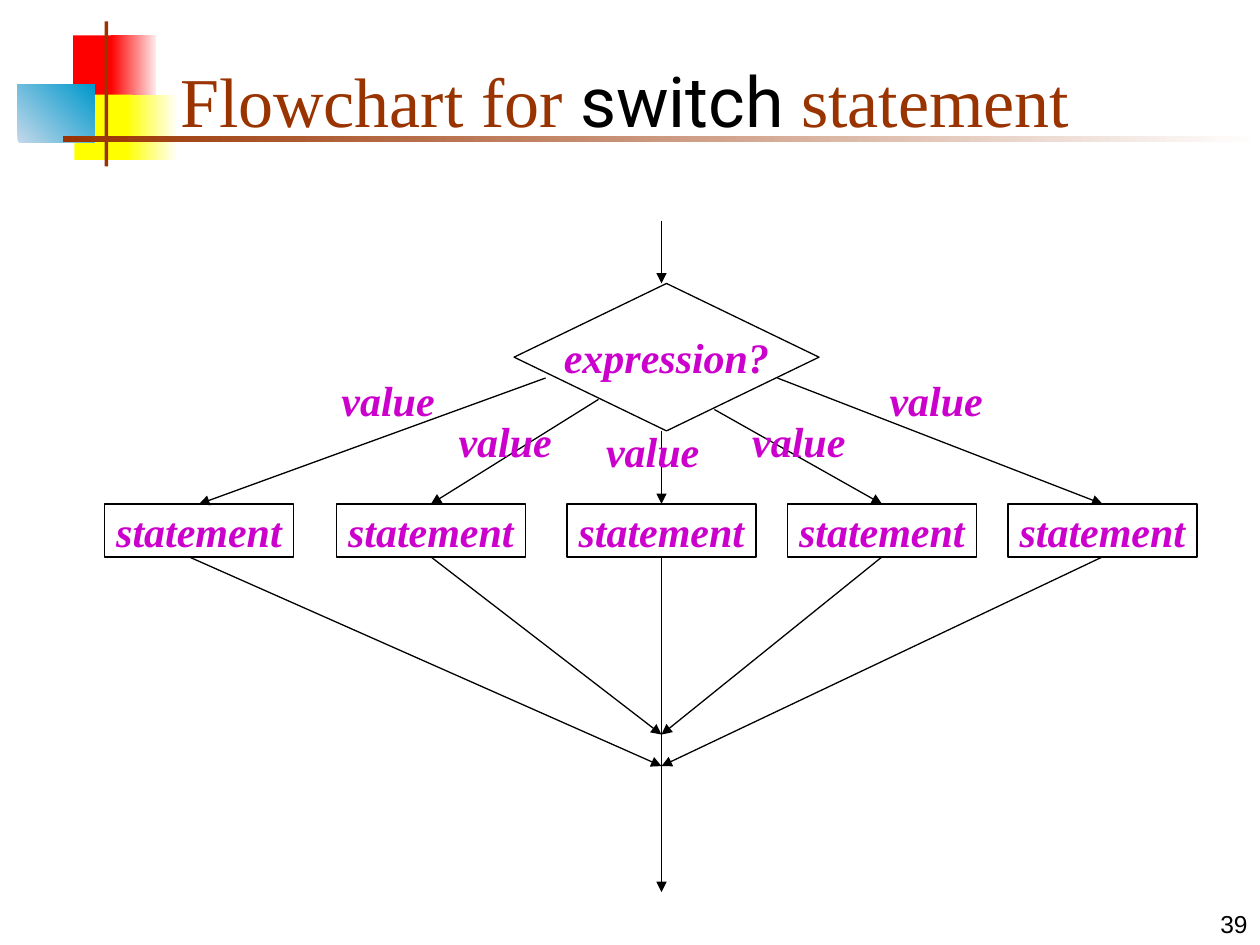
import pptx
import pptx.util
import pptx.dml.color
import pptx.enum.shapes
import pptx.enum.text
import pptx.oxml
import pptx.oxml.ns
from pptx.util import Inches

SHAPE = pptx.enum.shapes.MSO_SHAPE
ALIGN = pptx.enum.text.PP_ALIGN
ANCHOR = pptx.enum.text.MSO_ANCHOR
COLORS = {
    "rust": "993300", "red": "FF0000", "pink": "FFEAEA", "yellow": "FFFF00",
    "cream": "FFFFF8", "pale blue": "C4D8EA", "blue": "0099CC",
    "white": "FFFFFF", "black": "000000", "magenta": "CC00CC",
}
LABEL = {"name": "Times New Roman", "size": 24, "bold": True, "italic": True, "color": "magenta"}
TITLE = {"name": "Times New Roman", "size": 40, "color": "rust"}
KEYWORD = {"name": "Roboto", "size": 40, "color": "black"}
NUMBER = {"name": "Arial", "size": 14, "color": "black"}


def rgb(color):
    return pptx.dml.color.RGBColor.from_string(COLORS[color])


def inches(values):
    return [Inches(value) for value in values]


def write(shape, spans, align, anchor, wrap=True):
    """Fill a shape with one paragraph of (text, format) spans."""
    frame = shape.text_frame
    frame.word_wrap = wrap
    frame.auto_size = pptx.enum.text.MSO_AUTO_SIZE.NONE
    frame.vertical_anchor = anchor
    para = frame.paragraphs[0]
    para.alignment = align
    for text, style in spans:
        span = para.add_run()
        span.text = text
        for key, value in style.items():
            if key == "color":
                span.font.color.rgb = rgb(value)
            else:
                setattr(span.font, key, pptx.util.Pt(value) if key == "size" else value)


def add_block(page, box, colors, angle=0):
    """Borderless rectangle in one colour, or in a two-colour gradient."""
    block = page.shapes.add_shape(SHAPE.RECTANGLE, *inches(box))
    block.shadow.inherit = False
    block.line.fill.background()
    if len(colors) == 1:
        block.fill.solid()
        block.fill.fore_color.rgb = rgb(colors[0])
        return
    block.fill.gradient()
    block.fill.gradient_angle = angle
    for stop, color, position in zip(block.fill.gradient_stops, colors, (0, 1)):
        stop.color.rgb = rgb(color)
        stop.position = position


def add_step(page, kind, box, text):
    step = page.shapes.add_shape(kind, *inches(box))
    step.shadow.inherit = False
    step.fill.background()
    step.line.color.rgb = rgb("black")
    step.line.width = pptx.util.Pt(0.75)
    write(step, [(text, LABEL)], ALIGN.CENTER, ANCHOR.MIDDLE, wrap=False)


def add_text(page, box, text, style, align, anchor):
    label = page.shapes.add_textbox(*inches(box))
    write(label, [(text, style)], align, anchor)


def add_arrow(page, start, end):
    arrow = page.shapes.add_connector(
        pptx.enum.shapes.MSO_CONNECTOR.STRAIGHT, *inches(start + end))
    arrow.line.color.rgb = rgb("black")
    arrow.line.width = pptx.util.Pt(0.75)
    qn = pptx.oxml.ns.qn
    head = arrow.line._get_or_add_ln().makeelement(qn("a:tailEnd"), {"type": "triangle"})
    arrow.line._get_or_add_ln().append(head)
    properties = arrow._element.spPr
    properties.append(properties.makeelement(qn("a:effectLst"), {}))


def build_ornament(page, box):
    """Coloured squares crossed by a bar and a fading rule."""
    left, top, width, height = box
    parts = [
        ((0.44, 0.11, 0.35, 0.52), ["red"], 0),
        ((0.74, 0.11, 0.36, 0.52), ["red", "pink"], 0),
        ((0.45, 0.58, 0.46, 0.52), ["yellow"], 0),
        ((0.86, 0.58, 0.4, 0.52), ["yellow", "cream"], 0),
        ((0, 0.5, 0.61, 0.46), ["pale blue", "blue"], 45),
        ((0.69, 0, 0.03, height), ["rust"], 0),
        ((0.36, 0.91, width - 0.36, 0.05), ["rust", "white"], 0),
    ]
    for (x, y, w, h), colors, angle in parts:
        add_block(page, (left + x, top + y, w, h), colors, angle)


def build_title(page, box):
    title = page.shapes.title
    title.left, title.top, title.width, title.height = inches(box)
    spans = [("Flowchart for ", TITLE), ("switch", KEYWORD), (" statement", TITLE)]
    write(title, spans, ALIGN.LEFT, ANCHOR.BOTTOM)


def build_flowchart(page, box):
    """Decision that branches to five statements, which then join again."""
    left, top, width, height = box
    axis = left + 4.42
    row, row_height = top + 2.25, 0.42
    row_end = row + row_height

    # Entry, decision and exit
    add_arrow(page, (axis, top), (axis, top + 0.5))
    add_step(page, SHAPE.FLOWCHART_DECISION, (left + 3.25, top + 0.5, 2.42, 1.17), "expression?")
    add_arrow(page, (axis, row_end), (axis, top + height))

    # Per branch: step left, arrow start, arrow end, exit x, join y, label corner
    branches = [
        (0, (3.5, 1.25), 0.75, 0.67, 4.33, (1.74, 1.17)),
        (1.84, (3.92, 1.42), 2.59, 2.59, 4.08, (2.67, 1.5)),
        (3.67, (4.42, 1.67), 4.42, None, None, (3.84, 1.58)),
        (5.42, (4.84, 1.5), 6.17, 6.17, 4.08, (5, 1.5)),
        (width - 1.5, (5.34, 1.25), 7.92, 7.92, 4.33, (6.09, 1.17)),
    ]
    for step_x, (start_x, start_y), end_x, exit_x, join_y, _ in branches:
        add_step(page, SHAPE.FLOWCHART_PROCESS, (left + step_x, row, 1.5, row_height), "statement")
        add_arrow(page, (left + start_x, top + start_y), (left + end_x, row))
        if exit_x is not None:
            add_arrow(page, (left + exit_x, row_end), (axis, top + join_y))

    # Branch labels lie over the arrows
    for *_, (x, y) in branches:
        add_text(page, (left + x, top + y, 1.02, 0.5), "value", LABEL, ALIGN.CENTER, ANCHOR.TOP)


def build_number(page, box):
    add_text(page, box, "39", NUMBER, ALIGN.RIGHT, ANCHOR.BOTTOM)


def main():
    deck = pptx.Presentation()
    deck.slide_width, deck.slide_height = inches((10, 7.5))
    page = deck.slides.add_slide(deck.slide_layouts.get_by_name("Title Only"))
    build_ornament(page, (0.14, 0.17, 9.86, 1.15))
    build_title(page, (1.33, 0.25, 8.52, 0.92))
    build_flowchart(page, (0.83, 1.75, 8.67, 5.33))
    build_number(page, (7.92, 7, 2.08, 0.5))
    deck.save("out.pptx")


if __name__ == "__main__":
    main()
